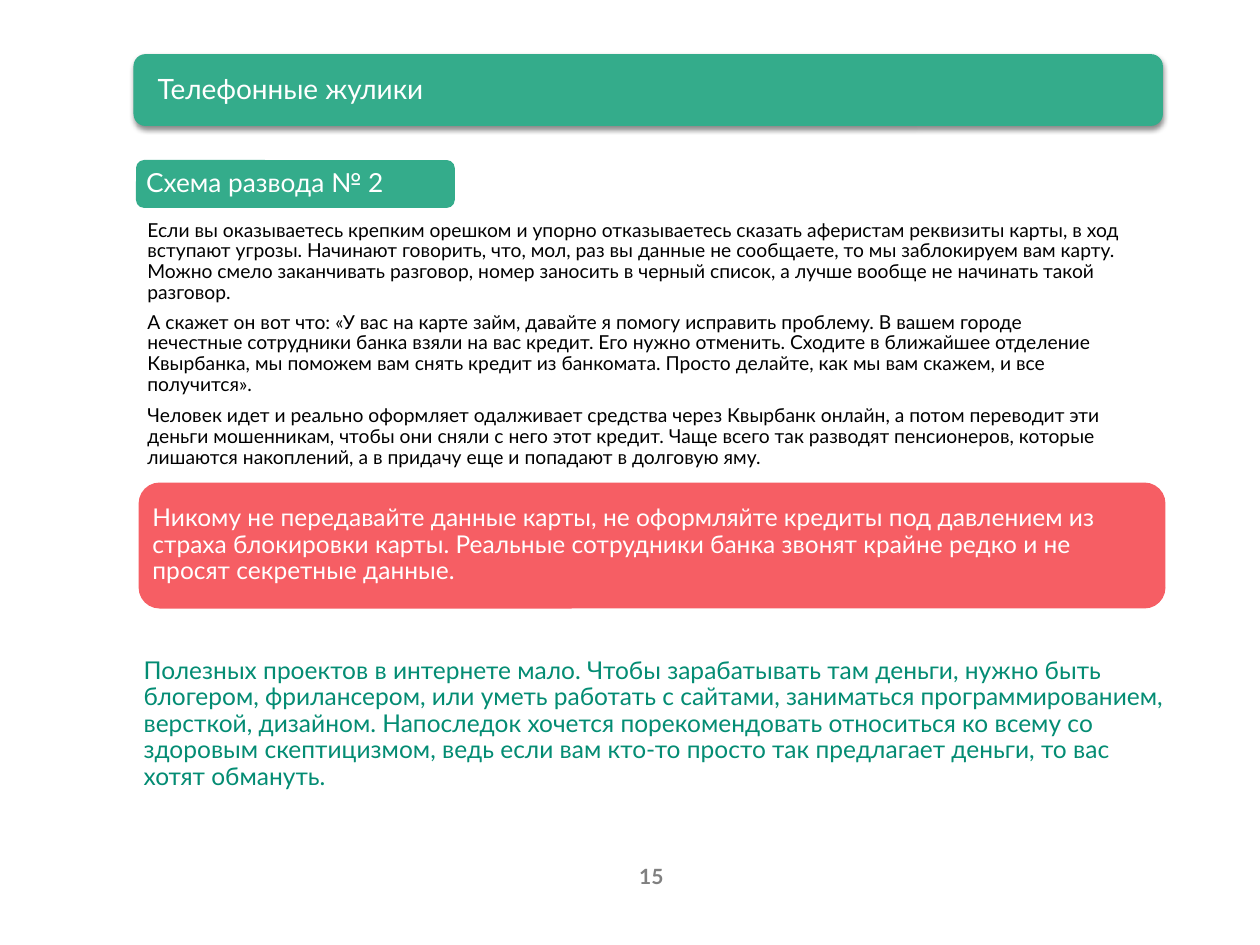
from lxml import etree
from pptx import Presentation
from pptx.dml.color import RGBColor
from pptx.enum.shapes import MSO_SHAPE as Shape
from pptx.enum.text import MSO_ANCHOR as Anchor, PP_ALIGN as Align
from pptx.oxml.ns import qn
from pptx.util import Inches, Pt

COLORS = {
    "green": "34AC8B",
    "red": "F65E64",
    "teal": "038C73",
    "white": "FFFFFF",
    "black": "000000",
    "grey": "808080",
}

TITLE = "Телефонные жулики"
SCHEME = "Схема развода № 2"
STORY = [
    (1.71, "Если вы оказываетесь крепким орешком и упорно отказываетесь сказать аферистам "
     "реквизиты карты, в ход вступают угрозы. Начинают говорить, что, мол, раз вы данные не "
     "сообщаете, то мы заблокируем вам карту. Можно смело заканчивать разговор, номер заносить "
     "в черный список, а лучше вообще не начинать такой разговор."),
    (2.44, "А скажет он вот что: «У вас на карте займ, давайте я помогу исправить проблему. "
     "В вашем городе нечестные сотрудники банка взяли на вас кредит. Его нужно отменить. "
     "Сходите в ближайшее отделение Квырбанка, мы поможем вам снять кредит из банкомата. "
     "Просто делайте, как мы вам скажем, и все получится»."),
    (3.1, "Человек идет и реально оформляет одалживает средства через Квырбанк онлайн, а потом "
     "переводит эти деньги мошенникам, чтобы они сняли с него этот кредит. Чаще всего так "
     "разводят пенсионеров, которые лишаются накоплений, а в придачу еще и попадают в "
     "долговую яму."),
]
WARNING = (
    "Никому не передавайте данные карты, не оформляйте кредиты под давлением из страха "
    "блокировки карты. Реальные сотрудники банка звонят крайне редко и не просят секретные данные."
)
ADVICE = (
    "Полезных проектов в интернете мало. Чтобы зарабатывать там деньги, нужно быть блогером, "
    "фрилансером, или уметь работать с сайтами, заниматься программированием, версткой, дизайном. "
    "Напоследок хочется порекомендовать относиться ко всему со здоровым скептицизмом, ведь если "
    "вам кто-то просто так предлагает деньги, то вас хотят обмануть."
)


def color(name):
    return RGBColor.from_string(COLORS[name])


def add_panel(page, box, fill):
    panel = page.shapes.add_shape(Shape.ROUNDED_RECTANGLE, *map(Inches, box))
    panel.shadow.inherit = False
    panel.fill.solid()
    panel.fill.fore_color.rgb = color(fill)
    panel.line.fill.background()
    return panel


def add_shadow(panel):
    effects = panel._element.spPr.find(qn("a:effectLst"))
    shadow = etree.SubElement(effects, qn("a:outerShdw"), blurRad=str(Pt(3.1)),
                              dist=str(Pt(1.8)), dir="5400000", rotWithShape="0")
    tint = etree.SubElement(shadow, qn("a:srgbClr"), val=COLORS["black"])
    etree.SubElement(tint, qn("a:alpha"), val="45000")


def add_text(page, box, text, size, ink, inset=0.06):
    frame = page.shapes.add_textbox(*map(Inches, box)).text_frame
    frame.word_wrap = True
    frame.vertical_anchor = Anchor.MIDDLE
    frame.margin_left = frame.margin_right = Inches(inset)
    frame.margin_top = frame.margin_bottom = Inches(inset)
    para = frame.paragraphs[0]
    para.text = text
    para.line_spacing = 0.9
    para.space_after = Pt(0.35 * size)
    para.font.name = "Lato"
    para.font.size = Pt(size)
    para.font.color.rgb = color(ink)
    return para


def add_title(page, box):
    left, top, width, height = box
    add_shadow(add_panel(page, box, "green"))
    para = add_text(page, (left + 0.02, top + 0.03, width - 0.06, height - 0.06),
                    TITLE, 16, "white", 0.07)
    para._p.get_or_add_pPr().set("marL", str(Inches(0.1)))


def add_label(page, box, text, size, fill, pad):
    left, top, width, height = box
    add_panel(page, box, fill)
    add_text(page, (left + pad, top + pad, width - 2 * pad, height - 2 * pad),
             text, size, "white")


def add_story(page, left, width, height):
    for top, text in STORY:
        add_text(page, (left, top, width, height), text, 11, "black", 0.05)


def add_page_number(page, box):
    para = add_text(page, box, "15", 12, "grey")
    para.alignment = Align.CENTER
    para.line_spacing = 1.0
    para.space_after = Pt(0)
    para.font.bold = True


def main():
    deck = Presentation()
    deck.slide_width, deck.slide_height = Inches(10), Inches(7.5)
    page = deck.slides.add_slide(deck.slide_layouts[6])
    add_page_number(page, (4.17, 6.75, 2, 0.4))
    add_label(page, (1.08, 1.27, 2.53, 0.38), SCHEME, 15, "green", 0.02)
    add_story(page, 1.12, 7.83, 0.74)
    add_label(page, (1.1, 3.83, 8.15, 1), WARNING, 14, "red", 0.05)
    add_text(page, (1.08, 5.15, 8.29, 1.2), ADVICE, 14, "teal")
    add_title(page, (1.06, 0.43, 8.17, 0.57))
    deck.save("out.pptx")


if __name__ == "__main__":
    main()
